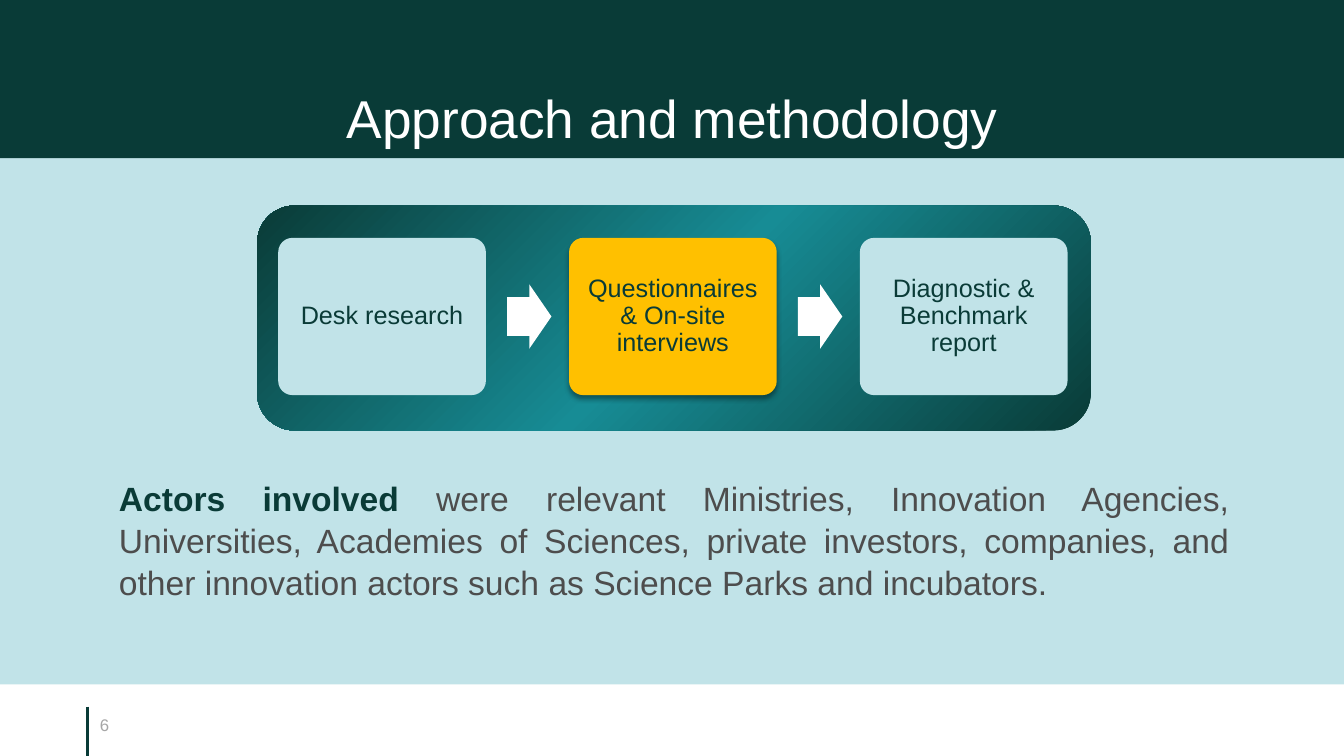
from copy import deepcopy

from lxml.etree import SubElement
from pptx import Presentation
from pptx.dml.color import RGBColor
from pptx.enum.shapes import MSO_CONNECTOR, MSO_SHAPE
from pptx.enum.text import MSO_ANCHOR, MSO_AUTO_SIZE, PP_ALIGN
from pptx.oxml.ns import qn
from pptx.util import Inches, Pt

PINE = RGBColor(0x09, 0x3B, 0x37)
DEEP = RGBColor(0x0A, 0x3B, 0x37)
TEAL = RGBColor(0x17, 0x8C, 0x95)
PALE = RGBColor(0xC1, 0xE3, 0xE8)
AMBER = RGBColor(0xFF, 0xC0, 0x00)
WHITE = RGBColor(0xFF, 0xFF, 0xFF)
GREY = RGBColor(0xA6, 0xA6, 0xA6)
SLATE = RGBColor(0x4D, 0x4D, 0x4D)


class Deck:
    """Holds the style and the slide; places are percent of the slide's size."""

    font = "Arial"

    def __init__(self):
        self.prs = Presentation()
        self.prs.slide_width, self.prs.slide_height = Inches(13.33), Inches(7.5)
        self.slide = self.prs.slides.add_slide(self.prs.slide_layouts[5])
        self.shapes = self.slide.shapes

    def place(self, x, y, w, h):
        wide, high = self.prs.slide_width, self.prs.slide_height
        return [round(part * full / 100)
                for part, full in zip((x, y, w, h), (wide, high, wide, high))]

    def letter(self, shape, runs, size, align, anchor, pads, space=1.0):
        frame = shape.text_frame
        frame.word_wrap = True
        frame.auto_size = MSO_AUTO_SIZE.NONE
        frame.vertical_anchor = anchor
        (frame.margin_left, frame.margin_top,
         frame.margin_right, frame.margin_bottom) = map(Inches, pads)
        para = frame.paragraphs[0]
        para.alignment, para.line_spacing = align, space
        for words, color, bold in runs:
            run = para.add_run()
            run.text = words
            run.font.name, run.font.size = self.font, Pt(size)
            run.font.bold = bold
            run.font.color.rgb = color

    def shape(self, kind, box, color, *adjust):
        shape = self.shapes.add_shape(kind, *self.place(*box))
        shape.shadow.inherit = False
        shape.line.fill.background()
        shape.fill.solid()
        shape.fill.fore_color.rgb = color
        for i, value in enumerate(adjust):
            shape.adjustments[i] = value
        return shape

    def blend(self, shape, colors, angle):
        shape.fill.gradient()
        shape.fill.gradient_angle = angle
        first = shape.element.spPr.find(".//" + qn("a:gs"))
        for _ in colors[2:]:
            first.addnext(deepcopy(first))
        for i, (stop, color) in enumerate(zip(shape.fill.gradient_stops, colors)):
            stop.color.rgb = color
            stop.position = i / (len(colors) - 1)

    def shade(self, shape):
        effects = shape.element.spPr.find(qn("a:effectLst"))
        outer = SubElement(effects, qn("a:outerShdw"), blurRad=str(Pt(4)),
                           dist=str(Pt(3)), dir="5400000", rotWithShape="0")
        black = SubElement(outer, qn("a:srgbClr"), val="000000")
        SubElement(black, qn("a:alpha"), val="40000")

    def text(self, box, *style):
        self.letter(self.shapes.add_textbox(*self.place(*box)), *style)

    def title(self, box, *style):
        title = self.shapes.title
        title.left, title.top, title.width, title.height = self.place(*box)
        title.element.getparent().append(title.element)
        self.letter(title, *style)

    def line(self, x, top, end, color, width):
        left, start, _, stop = self.place(x, top, 0, end)
        line = self.shapes.add_connector(MSO_CONNECTOR.STRAIGHT,
                                         left, start, left, stop)
        line.line.color.rgb, line.line.width = color, Pt(width)
        SubElement(line.element.spPr, qn("a:effectLst"))


def main():
    deck = Deck()

    # Page number and its rule
    deck.text((7.43, 93.87, 3.68, 4), [("6", GREY, False)], 12,
              PP_ALIGN.LEFT, MSO_ANCHOR.TOP, (0, 0.05, 0, 0.05))
    deck.line(6.53, 93.47, 100, PINE, 2.25)

    # Bands and title
    deck.shape(MSO_SHAPE.RECTANGLE, (0, 20.93, 100, 69.6), PALE)
    deck.shape(MSO_SHAPE.RECTANGLE, (0, 0, 100, 20.93), PINE)
    deck.title((7.95, 8.4, 84.17, 11.47),
               [("Approach and methodology", WHITE, False)], 38,
               PP_ALIGN.CENTER, MSO_ANCHOR.BOTTOM, (0.1, 0.05, 0.1, 0), 0.9)

    # Process panel
    panel = deck.shape(MSO_SHAPE.ROUNDED_RECTANGLE,
                       (19.13, 27.2, 62.04, 29.73), TEAL, 0.167)
    deck.blend(panel, (PINE, TEAL, DEEP), 135)

    # Steps, with an arrow between neighbours
    steps = [("Desk research", PALE),
             ("Questionnaires & On-site interviews", AMBER),
             ("Diagnostic & Benchmark report", PALE)]
    pitch = 21.64
    for i, (words, color) in enumerate(steps):
        if i:
            deck.shape(MSO_SHAPE.RIGHT_ARROW,
                       (37.73 + (i - 1) * pitch, 37.6, 3.3, 8.53), WHITE, 0.6, 0.5)
        card = deck.shape(MSO_SHAPE.ROUNDED_RECTANGLE,
                          (20.7 + i * pitch, 31.47, 15.45, 20.8), color, 0.09)
        deck.letter(card, [(words, DEEP, False)], 18, PP_ALIGN.CENTER,
                    MSO_ANCHOR.MIDDLE, [0.11] * 4, 0.9)
        if color == AMBER:
            deck.shade(card)

    # Actors
    deck.text((7.95, 62.27, 84.24, 19.6),
              [("Actors involved ", DEEP, True),
               ("were relevant Ministries, Innovation Agencies, Universities, "
                "Academies of Sciences, private investors, companies, and other "
                "innovation actors such as Science Parks and incubators.",
                SLATE, False)],
              24, PP_ALIGN.JUSTIFY, MSO_ANCHOR.TOP, (0.12, 0.05, 0.1, 0.05), 1.05)

    deck.prs.save("out.pptx")


if __name__ == "__main__":
    main()
